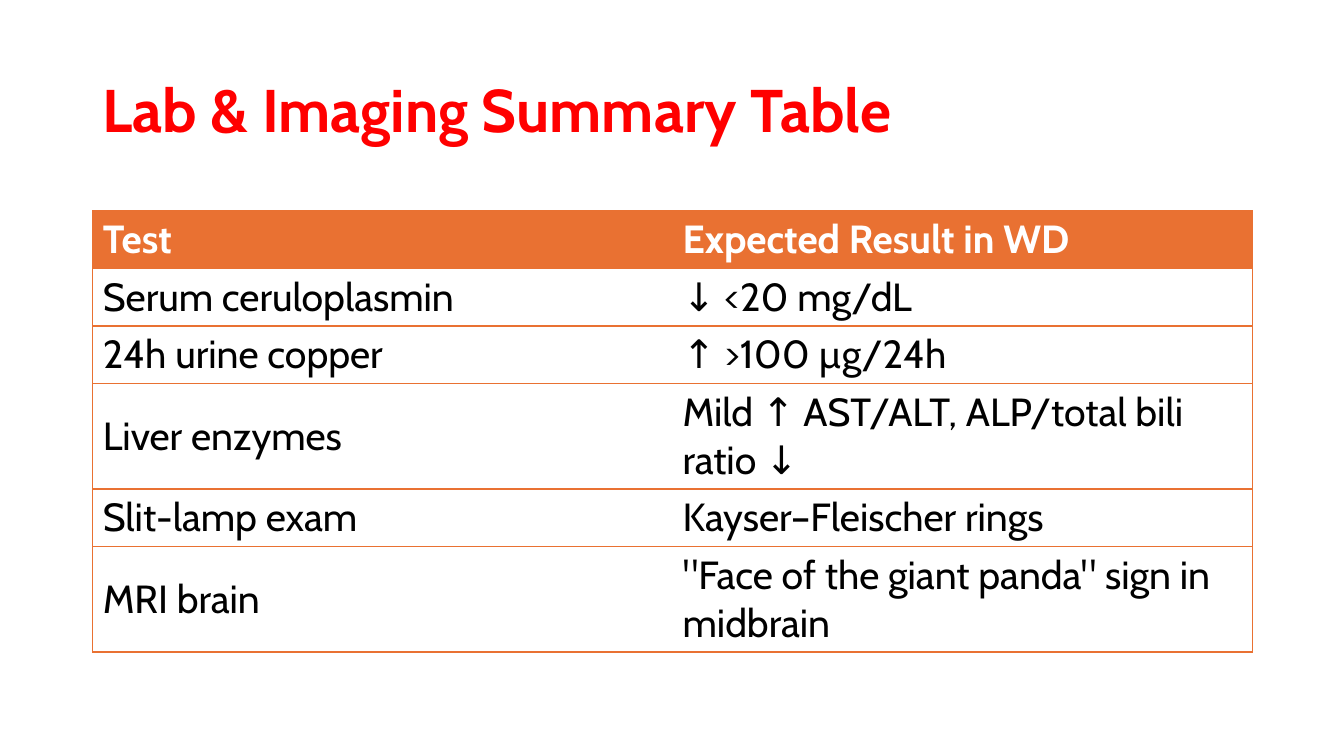
import dataclasses

import lxml.etree
import pptx
import pptx.dml.color
import pptx.enum.text
import pptx.oxml.ns
import pptx.util

Inches = pptx.util.Inches
Anchor = pptx.enum.text.MSO_ANCHOR


@dataclasses.dataclass(frozen=True)
class Theme:
    font: str = "Cabin"
    title_color: str = "FF0000"
    accent: str = "E97132"
    paper: str = "FFFFFF"
    ink: str = "000000"
    title_size: int = 43
    table_size: int = 28
    border_width: int = 1


THEME = Theme()
TITLE = "Lab & Imaging Summary Table"
RESULTS = [
    ("Test", "Expected Result in WD"),
    ("Serum ceruloplasmin", "↓ <20 mg/dL"),
    ("24h urine copper", "↑ >100 µg/24h"),
    ("Liver enzymes", "Mild ↑ AST/ALT, ALP/total bili ratio ↓"),
    ("Slit-lamp exam", "Kayser–Fleischer rings"),
    ("MRI brain", '"Face of the giant panda" sign in midbrain'),
]
ONE_LINE, TWO_LINES = 0.57, 1.04
ROW_HEIGHTS = [ONE_LINE, ONE_LINE, ONE_LINE, TWO_LINES, ONE_LINE, TWO_LINES]


def write_text(frame, text, size, color, bold):
    """Fill a text frame with one formatted, left-aligned paragraph."""
    para = frame.paragraphs[0]
    para.alignment = pptx.enum.text.PP_ALIGN.LEFT
    span = para.add_run()
    span.text = text
    formats = {"name": THEME.font, "size": pptx.util.Pt(size), "bold": bold}
    for name, value in formats.items():
        setattr(span.font, name, value)
    span.font.color.rgb = pptx.dml.color.RGBColor.from_string(color)
    return para


def add_title(page):
    title = page.shapes.title
    place = {"left": 0.92, "top": 0.4, "width": 11.5, "height": 1.45}
    for name, value in place.items():
        setattr(title, name, Inches(value))
    frame = title.text_frame
    settings = {"word_wrap": True, "vertical_anchor": Anchor.MIDDLE,
                "auto_size": pptx.enum.text.MSO_AUTO_SIZE.NONE}
    for name, value in settings.items():
        setattr(frame, name, value)
    para = write_text(frame, TITLE, THEME.title_size, THEME.title_color, True)
    para.line_spacing = 0.9


def set_borders(cell, sides):
    """Draw the named sides (L, R, T, B) and leave the others without a line."""
    properties = cell._tc.get_or_add_tcPr()
    qualify = pptx.oxml.ns.qn
    for position, side in enumerate("LRTB"):
        width = pptx.util.Pt(THEME.border_width)
        line = lxml.etree.Element(qualify(f"a:ln{side}"), w=str(width))
        if side in sides:
            fill = lxml.etree.SubElement(line, qualify("a:solidFill"))
            lxml.etree.SubElement(fill, qualify("a:srgbClr"), val=THEME.accent)
        else:
            lxml.etree.SubElement(line, qualify("a:noFill"))
        properties.insert(position, line)


def fill_cell(cell, text, is_header, sides):
    cell.vertical_anchor = Anchor.MIDDLE
    cell.fill.solid()
    background = THEME.accent if is_header else THEME.paper
    cell.fill.fore_color.rgb = pptx.dml.color.RGBColor.from_string(background)
    color = THEME.paper if is_header else THEME.ink
    write_text(cell.text_frame, text, THEME.table_size, color, is_header)
    set_borders(cell, sides)


def add_results_table(page):
    frame = page.shapes.add_table(
        len(RESULTS), 2, Inches(0.92), Inches(2.09),
        Inches(11.5), Inches(sum(ROW_HEIGHTS)))
    table = frame.table
    for row, height in zip(table.rows, ROW_HEIGHTS):
        row.height = Inches(height)
    # Horizontal rules everywhere, vertical ones only on the outside
    for row_index, texts in enumerate(RESULTS):
        for column, (text, sides) in enumerate(zip(texts, ("LTB", "RTB"))):
            fill_cell(table.cell(row_index, column), text, row_index == 0, sides)


def main():
    deck = pptx.Presentation()
    deck.slide_width, deck.slide_height = Inches(13.33), Inches(7.5)
    page = deck.slides.add_slide(deck.slide_layouts.get_by_name("Title Only"))
    add_title(page)
    add_results_table(page)
    deck.save("out.pptx")


if __name__ == "__main__":
    main()
